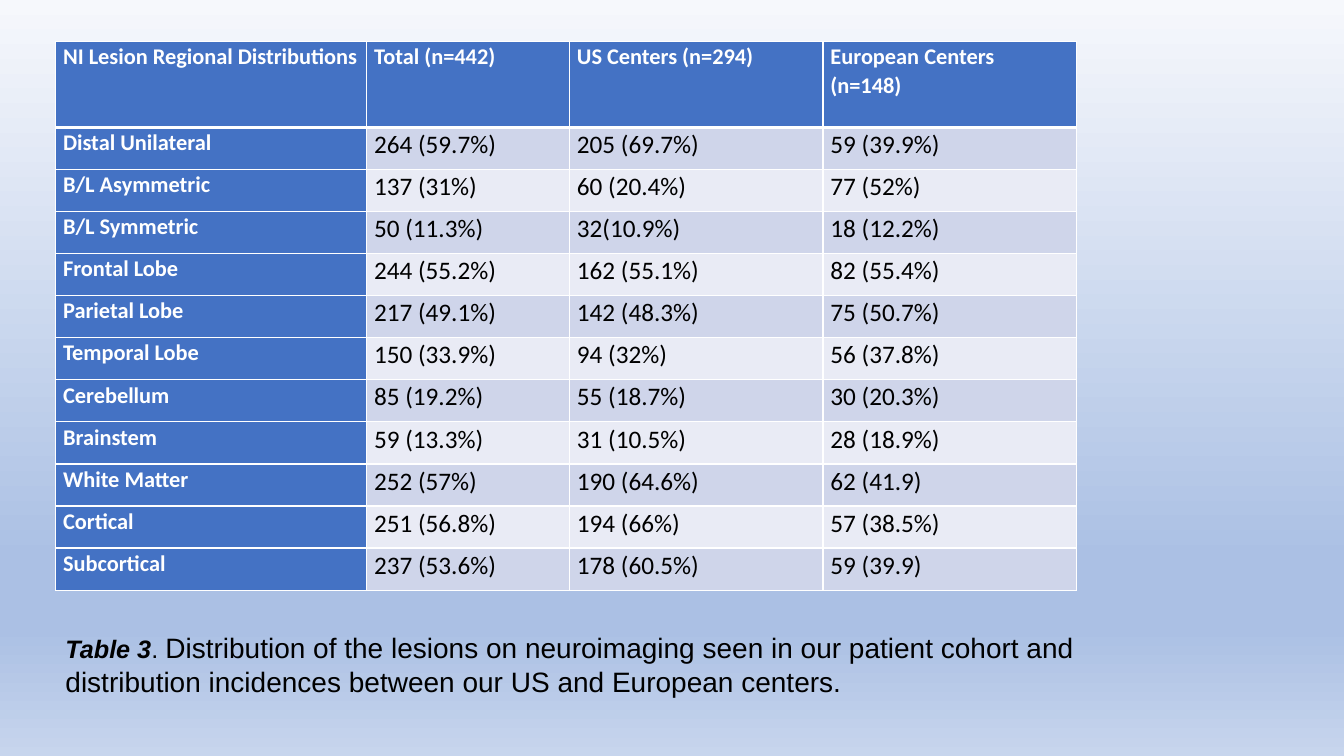
from lxml import etree
from pptx import Presentation
from pptx.dml.color import RGBColor
from pptx.enum import text
from pptx.oxml import ns
from pptx.util import Cm, Pt

WHITE = RGBColor(0xFF, 0xFF, 0xFF)
BLACK = RGBColor(0x00, 0x00, 0x00)
BLUE = RGBColor(0x44, 0x72, 0xC4)
BAND_DARK = RGBColor(0xCF, 0xD5, 0xEA)
BAND_LIGHT = RGBColor(0xE9, 0xEB, 0xF5)
SKY_TOP = RGBColor(0xF6, 0xF8, 0xFC)
SKY_MID = RGBColor(0xAB, 0xC0, 0xE4)
SKY_END = RGBColor(0xC7, 0xD5, 0xED)

BACKGROUND_STOPS = [(0, SKY_TOP), (74, SKY_MID), (83, SKY_MID), (100, SKY_END)]
COLUMN_WIDTHS = [7.84, 5.11, 6.39, 6.39]
HEADER_HEIGHT = 2.17
LESIONS = [
    ("NI Lesion Regional Distributions", "Total (n=442)", "US Centers (n=294)",
     "European Centers\n(n=148)"),
    ("Distal Unilateral", "264 (59.7%)", "205 (69.7%)", "59 (39.9%)"),
    ("B/L Asymmetric", "137 (31%)", "60 (20.4%)", "77 (52%)"),
    ("B/L Symmetric", "50 (11.3%)", "32(10.9%)", "18 (12.2%)"),
    ("Frontal Lobe", "244 (55.2%)", "162 (55.1%)", "82 (55.4%)"),
    ("Parietal Lobe", "217 (49.1%)", "142 (48.3%)", "75 (50.7%)"),
    ("Temporal Lobe", "150 (33.9%)", "94 (32%)", "56 (37.8%)"),
    ("Cerebellum", "85 (19.2%)", "55 (18.7%)", "30 (20.3%)"),
    ("Brainstem", "59 (13.3%)", "31 (10.5%)", "28 (18.9%)"),
    ("White Matter", "252 (57%)", "190 (64.6%)", "62 (41.9)"),
    ("Cortical", "251 (56.8%)", "194 (66%)", "57 (38.5%)"),
    ("Subcortical", "237 (53.6%)", "178 (60.5%)", "59 (39.9)"),
]
CAPTION = [
    ("Table 3", 18, True),
    (". ", 18, False),
    ("Distribution of the lesions on neuroimaging seen in our patient cohort and "
     "distribution incidences between our US and European centers.", 20, False),
]


def add_solid_fill(parent, color):
    fill = etree.SubElement(parent, ns.qn("a:solidFill"))
    etree.SubElement(fill, ns.qn("a:srgbClr"), val=str(color))


def paint_background(s):
    fill = s.background.fill
    fill.gradient()
    fill.gradient_angle = 270
    stops = next(s.element.iter(ns.qn("a:gsLst")))
    for stop in list(stops):
        stops.remove(stop)
    for percent, color in BACKGROUND_STOPS:
        stop = etree.SubElement(stops, ns.qn("a:gs"), pos=str(percent * 1000))
        etree.SubElement(stop, ns.qn("a:srgbClr"), val=str(color))


def set_borders(cell, top, bottom):
    tc_pr = cell._tc.get_or_add_tcPr()
    for side, width in (("L", 1), ("R", 1), ("T", top), ("B", bottom)):
        line = etree.SubElement(tc_pr, ns.qn(f"a:ln{side}"), w=str(Pt(width)))
        add_solid_fill(line, WHITE)


def format_cell(cell, row, column):
    heading = row == 0 or column == 0
    set_borders(cell, 3 if row == 1 else 1, 3 if row == 0 else 1)
    cell.fill.solid()
    band = BAND_DARK if row % 2 else BAND_LIGHT
    cell.fill.fore_color.rgb = BLUE if heading else band
    cell.margin_left = cell.margin_right = Cm(0.19)
    cell.margin_top = cell.margin_bottom = 0
    for p in cell.text_frame.paragraphs:
        p.line_spacing = 1.07
        p.font.name = "Calibri"
        p.font.size = Pt(16 if heading else 18)
        p.font.bold = heading
        p.font.color.rgb = WHITE if heading else BLACK


def add_lesion_table(s, left, top, width, height):
    table = s.shapes.add_table(len(LESIONS), len(COLUMN_WIDTHS), Cm(left), Cm(top),
                               Cm(width), Cm(height)).table
    table.first_col = True
    for column, share in zip(table.columns, COLUMN_WIDTHS):
        column.width = Cm(width * share / sum(COLUMN_WIDTHS))
    body_height = (height - HEADER_HEIGHT) / (len(LESIONS) - 1)
    for i, values in enumerate(LESIONS):
        table.rows[i].height = Cm(body_height if i else HEADER_HEIGHT)
        for j, value in enumerate(values):
            cell = table.cell(i, j)
            cell.text = value
            format_cell(cell, i, j)


def add_caption(s, left, top, width, height):
    tf = s.shapes.add_textbox(Cm(left), Cm(top), Cm(width), Cm(height)).text_frame
    tf.word_wrap = True
    tf.auto_size = text.MSO_AUTO_SIZE.SHAPE_TO_FIT_TEXT
    p = tf.paragraphs[0]
    p.font.name = "Arial"
    p.font.color.rgb = BLACK
    for words, size, strong in CAPTION:
        r = p.add_run()
        r.text = words
        r.font.size = Pt(size)
        r.font.bold = r.font.italic = strong


def main():
    prs = Presentation()
    prs.slide_width, prs.slide_height = Cm(33.87), Cm(19.05)
    s = prs.slides.add_slide(prs.slide_layouts[6])
    paint_background(s)
    add_lesion_table(s, 1.4, 1.04, 25.73, 13.83)
    add_caption(s, 1.4, 15.77, 28.73, 1.96)
    prs.save("out.pptx")


if __name__ == "__main__":
    main()
